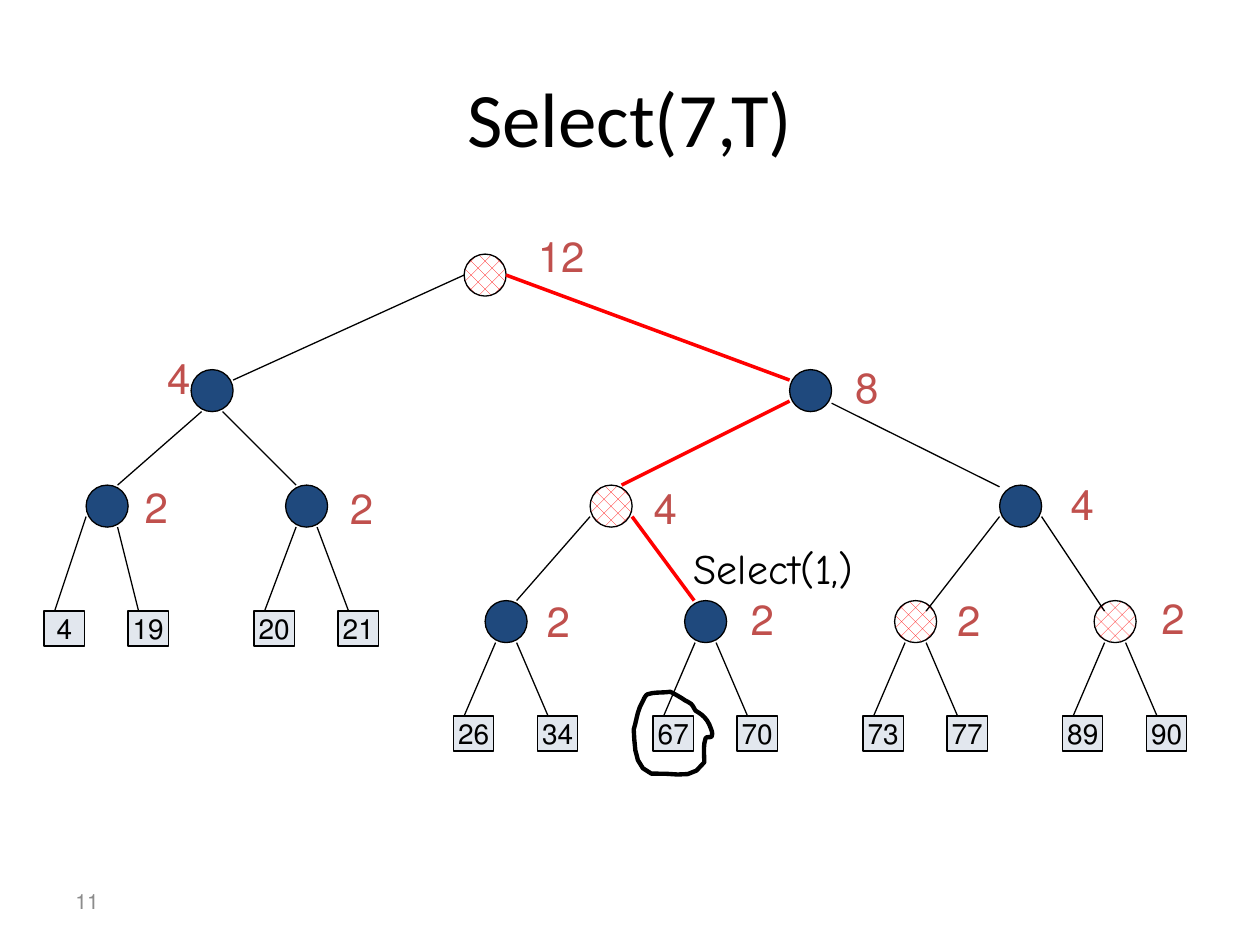
"""Draw the Select(7,T) search path on a balanced tree."""
from lxml import etree
from pptx import Presentation
from pptx.dml.color import RGBColor
from pptx.enum.dml import MSO_PATTERN
from pptx.enum.shapes import MSO_CONNECTOR, MSO_SHAPE
from pptx.enum.text import MSO_ANCHOR, PP_ALIGN
from pptx.oxml.ns import qn
from pptx.util import Pt

LEFT, MID, RIGHT = PP_ALIGN.LEFT, PP_ALIGN.CENTER, PP_ALIGN.RIGHT
TOP, CENTER = MSO_ANCHOR.TOP, MSO_ANCHOR.MIDDLE
OVAL, BOX = MSO_SHAPE.OVAL, MSO_SHAPE.RECTANGLE
DOTS, LINE = MSO_PATTERN.PERCENT_25, MSO_CONNECTOR.STRAIGHT
BLACK, RED, NAVY, ROSE = "000000", "FF0000", "1F497D", "C0504D"
SIZE, STEP, BASE = 24, 66, 145.2


def color(code):
    return RGBColor.from_string(code)


def write(shape, text, size, code=BLACK, name="Comic Neue", align=RIGHT, anchor=TOP, wrap=True):
    frame = shape.text_frame
    for key, value in {"word_wrap": wrap, "vertical_anchor": anchor}.items():
        setattr(frame, key, value)
    para = frame.paragraphs[0]
    para.alignment = align
    para._p.get_or_add_pPr().set("rtl", "1")
    run = para.add_run()
    run.text = text
    for key, value in {"size": Pt(size), "name": name}.items():
        setattr(run.font, key, value)
    run.font.color.rgb = color(code)


deck = Presentation()
for key, value in {"slide_width": Pt(720), "slide_height": Pt(540)}.items():
    setattr(deck, key, value)
shapes = deck.slides.add_slide(deck.slide_layouts[6]).shapes

heads = [
    ((36, 500.4, 168, 28.8), "11", {"size": 12, "code": "8C8C8C", "name": "Calibri", "align": LEFT, "anchor": CENTER}),
    ((335.5, 306.7, 159, 36), "Select(1,)", {"size": 24}),
    ((36, 21.6, 648, 90), "Select(7,T)", {"size": 44, "name": "Calibri", "align": MID, "anchor": CENTER}),
]
for place, text, style in heads:
    write(shapes.add_textbox(*map(Pt, place)), text, **style)

# left, row, dotted, count, count left, count top
nodes = [
    (265.2, 0, True, "12", 285.1, 128.2),
    (109.2, 1, False, "4", 80.6, 198),
    (451.2, 1, False, "8", 473.8, 203),
    (49.2, 2, False, "2", 67.7, 271.4),
    (163.2, 2, False, "2", 185, 272.2),
    (337.2, 2, True, "4", 358.6, 272.2),
    (571.2, 2, False, "4", 596.9, 270),
    (277.2, 3, False, "2", 297.4, 337),
    (391.2, 3, False, "2", 414, 335.5),
    (511.2, 3, True, "2", 532.1, 336.2),
    (625.2, 3, True, "2", 648.7, 334.8),
]
for left, row, dotted, text, across, down in nodes:
    node = shapes.add_shape(OVAL, Pt(left), Pt(BASE + row * STEP), Pt(SIZE), Pt(SIZE))
    node.shadow.inherit = False
    if dotted:
        node.fill.patterned()
        node.fill.pattern = DOTS
        node.fill.fore_color.rgb = color(RED)
        node.fill.back_color.rgb = color("FFFFFF")
    else:
        node.fill.solid()
        node.fill.fore_color.rgb = color(NAVY)
    node.line.color.rgb = color(BLACK)
    node.line.width = Pt(0.75)
    width = 56 if len(text) > 1 else 35.3
    write(shapes.add_textbox(Pt(across), Pt(down), Pt(width), Pt(36)), text, 24, ROSE)

links = [
    (265.2, 157.2, 133.2, 217.2, BLACK),
    (289.2, 157.2, 451.2, 217.2, RED),
    (451.2, 229.2, 355.2, 277.2, RED),
    (475.2, 230.4, 571.2, 278.2, BLACK),
    (595.2, 295.2, 631.2, 349.2, BLACK),
    (571.2, 295.2, 529.2, 349.2, BLACK),
    (361.2, 295.2, 396.7, 343.2, RED),
    (337.2, 295.2, 295.2, 343.2, BLACK),
    (127.2, 235.2, 169.2, 277.2, BLACK),
    (115.2, 235.2, 67.2, 277.2, BLACK),
]
twigs = [
    (49.2, 277.2, 349.2, 25.2, "4", "19"),
    (163.2, 277.2, 349.2, 145.2, "20", "21"),
    (277.2, 343.2, 409.2, 259.2, "26", "34"),
    (391.2, 343.2, 409.2, 373.2, "67", "70"),
    (511.2, 343.2, 409.2, 493.2, "73", "77"),
    (625.2, 343.2, 409.2, 607.2, "89", "90"),
]
for left, top, floor, first, *pair in twigs:
    for i, text in enumerate(pair):
        edge = first + 48 * i
        leaf = shapes.add_shape(BOX, Pt(edge), Pt(floor), Pt(23), Pt(20))
        leaf.shadow.inherit = False
        leaf.fill.solid()
        leaf.fill.fore_color.rgb = color(NAVY)
        tint = leaf.fill._xPr.find(qn("a:solidFill"))[0]
        etree.SubElement(tint, qn("a:alpha")).set("val", "13000")
        leaf.line.color.rgb = color(BLACK)
        leaf.line.width = Pt(0.75)
        write(leaf, text, 16, align=MID, anchor=CENTER, wrap=False)
        start = (left, top + 18) if text == "4" else (left + 6 + 12 * i, top + SIZE)
        links.append((*start, edge + 6, floor, BLACK))

for *ends, code in links:
    link = shapes.add_connector(LINE, *map(Pt, ends))
    link.line.color.rgb = color(code)
    link.line.width = Pt(2 if code == RED else 0.75)
    etree.SubElement(link._element.spPr, qn("a:effectLst"))

curves = [
    (5.6, 5.69, 5.57, 5.67, 5.52, 5.64), (5.49, 5.59, 5.5, 5.59, 5.44, 5.56),
    (5.4, 5.53, 5.32, 5.49, 5.32, 5.49), (5.26, 5.5, 5.2, 5.49, 5.14, 5.51),
    (5.12, 5.52, 5.11, 5.55, 5.1, 5.57), (5.06, 5.63, 5.05, 5.73, 5.03, 5.79),
    (5.04, 5.92, 5.03, 6.09, 5.17, 6.14), (5.38, 6.13, 5.49, 6.2, 5.59, 6.05),
    (5.59, 5.98, 5.58, 5.92, 5.6, 5.86), (5.61, 5.84, 5.65, 5.86, 5.65, 5.84),
    (5.66, 5.81, 5.64, 5.78, 5.63, 5.75),
]
x, y = 5.63, 5.75
pen = shapes.build_freeform(Pt(x * 72), Pt(y * 72))
dots = []
for a, b, c, d, e, f in curves:
    for t in (0.2, 0.4, 0.6, 0.8, 1):
        u = 1 - t
        mix = (u ** 3, 3 * u * u * t, 3 * u * t * t, t ** 3)
        dots.append([Pt(72 * sum(m * v for m, v in zip(mix, axis))) for axis in ((x, a, c, e), (y, b, d, f))])
    x, y = e, f
pen.add_line_segments(dots, close=True)
ring = pen.convert_to_shape()
ring.shadow.inherit = False
ring.fill.background()
ring.line.color.rgb = color(BLACK)
ring.line.width = Pt(2.5)

deck.save("out.pptx")
